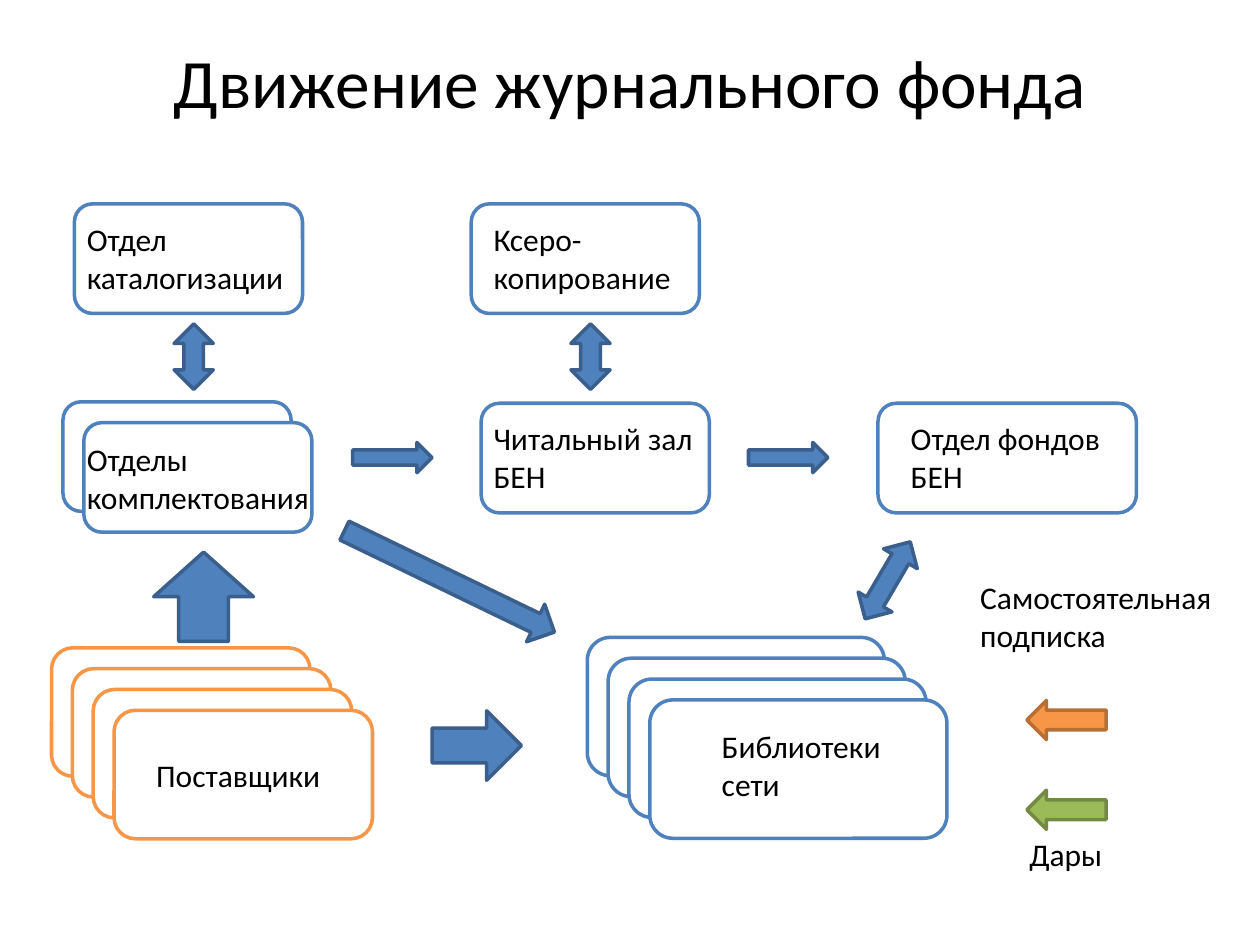
"""Build the slide that shows how the journal collection moves between departments."""
from pptx import Presentation
from pptx.dml.color import RGBColor
from pptx.enum.shapes import MSO_SHAPE as Preset
from pptx.enum.text import MSO_ANCHOR as Anchor, MSO_AUTO_SIZE as AutoSize, PP_ALIGN as Align
from pptx.util import Cm, Pt

BLACK = RGBColor(0x00, 0x00, 0x00)
WHITE = RGBColor(0xFF, 0xFF, 0xFF)
BLUE = RGBColor(0x4F, 0x81, 0xBD)
DARK_BLUE = RGBColor(0x3A, 0x5F, 0x8C)
ORANGE = RGBColor(0xF7, 0x96, 0x46)
DARK_ORANGE = RGBColor(0xB7, 0x6F, 0x34)
GREEN = RGBColor(0x9B, 0xBB, 0x59)
DARK_GREEN = RGBColor(0x73, 0x8A, 0x42)
FONT = "Calibri"
STACK_STEP = 0.42

presentation = Presentation()
presentation.slide_width, presentation.slide_height = Cm(25.4), Cm(19.05)
slide = presentation.slides.add_slide(presentation.slide_layouts[5])


def add_preset(preset, left, top, width, height, fill, line):
    shape = slide.shapes.add_shape(preset, Cm(left), Cm(top), Cm(width), Cm(height))
    shape.shadow.inherit = False
    shape.fill.solid()
    shape.fill.fore_color.rgb = fill
    shape.line.color.rgb = line
    shape.line.width = Pt(2)
    return shape


def format_paragraph(paragraph, size, alignment):
    paragraph.alignment = alignment
    paragraph.font.name = FONT
    paragraph.font.size = Pt(size)
    paragraph.font.color.rgb = BLACK


title = slide.shapes.title
title.left, title.top, title.width, title.height = Cm(1.27), Cm(0.76), Cm(22.86), Cm(1.75)
title.text_frame.text = "Движение журнального фонда"
title.text_frame.vertical_anchor = Anchor.MIDDLE
format_paragraph(title.text_frame.paragraphs[0], 39.6, Align.CENTER)

stacks = [
    (1.5, 4.11, 4.6, 2.21, BLUE, 1),
    (9.5, 4.11, 4.6, 2.21, BLUE, 1),
    (1.27, 8.1, 4.6, 2.21, BLUE, 2),
    (9.7, 8.13, 4.6, 2.21, BLUE, 1),
    (17.7, 8.13, 5.21, 2.21, BLUE, 1),
    (1.04, 13.06, 5.21, 2.59, ORANGE, 4),
    (11.84, 12.85, 5.99, 2.79, BLUE, 4),
]
for left, top, width, height, line, count in stacks:
    for index in range(count):
        offset = index * STACK_STEP
        add_preset(Preset.ROUNDED_RECTANGLE, left + offset, top + offset, width, height, WHITE, line)

arrows = [
    (Preset.UP_DOWN_ARROW, 3.51, 6.53, 0.79, 1.32, 0, BLUE, DARK_BLUE),
    (Preset.UP_DOWN_ARROW, 11.51, 6.53, 0.79, 1.32, 0, BLUE, DARK_BLUE),
    (Preset.RIGHT_ARROW, 7.11, 8.92, 1.6, 0.61, 0, BLUE, DARK_BLUE),
    (Preset.RIGHT_ARROW, 15.09, 8.92, 1.6, 0.61, 0, BLUE, DARK_BLUE),
    (Preset.UP_ARROW, 3.1, 11.13, 2.01, 1.8, 0, BLUE, DARK_BLUE),
    (Preset.RIGHT_ARROW, 6.71, 11.3, 4.7, 0.84, 25.8, BLUE, DARK_BLUE),
    (Preset.UP_DOWN_ARROW, 17.5, 10.8, 0.79, 1.8, 30.4, BLUE, DARK_BLUE),
    (Preset.RIGHT_ARROW, 8.71, 14.33, 1.8, 1.4, 0, BLUE, DARK_BLUE),
    (Preset.LEFT_ARROW, 20.7, 14.12, 1.6, 0.79, 0, ORANGE, DARK_ORANGE),
    (Preset.LEFT_ARROW, 20.7, 15.93, 1.6, 0.79, 0, GREEN, DARK_GREEN),
]
for preset, left, top, width, height, rotation, fill, line in arrows:
    arrow = add_preset(preset, left, top, width, height, fill, line)
    arrow.rotation = rotation

labels = [
    ("Отдел\nкаталогизации", 1.5, 4.32, 4.52),
    ("Ксеро-\nкопирование", 9.7, 4.32, 4.11),
    ("Отделы\nкомплектования", 1.5, 8.74, 5.03),
    ("Читальный зал\nБЕН", 9.7, 8.33, 4.72),
    ("Отдел фондов\nБЕН", 18.11, 8.33, 4.52),
    ("Самостоятельная\nподписка", 19.51, 11.53, 5.36),
    ("Поставщики", 2.9, 15.11, 3.86),
    ("Библиотеки\nсети", 14.3, 14.53, 3.76),
    ("Дары", 20.5, 16.71, 2.01),
]
for text, left, top, width in labels:
    height = 1.8 if "\n" in text else 1.02
    label = slide.shapes.add_textbox(Cm(left), Cm(top), Cm(width), Cm(height))
    label.text_frame.text = text
    label.text_frame.word_wrap = False
    label.text_frame.auto_size = AutoSize.SHAPE_TO_FIT_TEXT
    for paragraph in label.text_frame.paragraphs:
        format_paragraph(paragraph, 18, Align.LEFT)

presentation.save("out.pptx")
